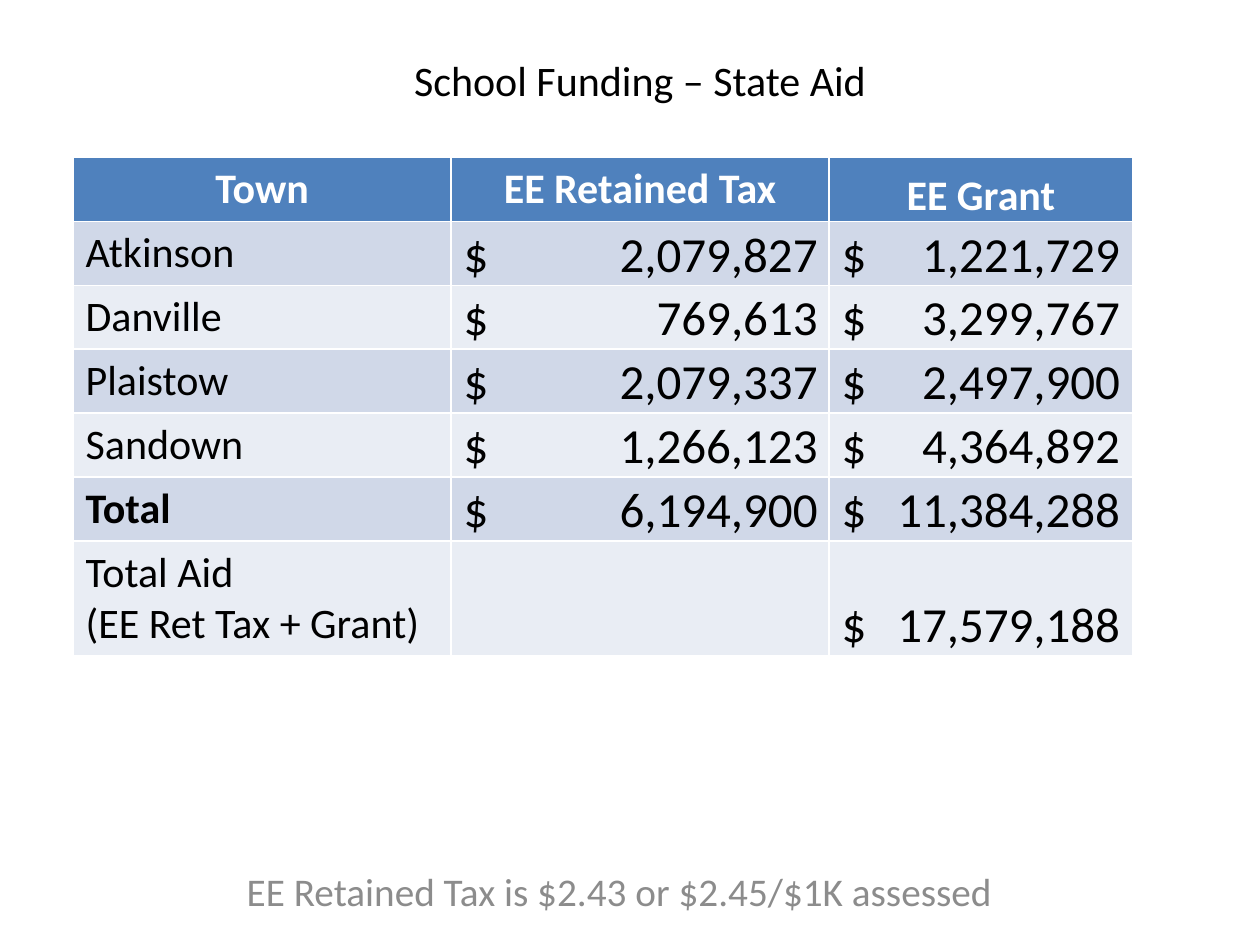
from dataclasses import dataclass

from lxml import etree
from pptx import Presentation
from pptx.dml.color import RGBColor
from pptx.enum.text import MSO_ANCHOR, MSO_AUTO_SIZE, PP_ALIGN
from pptx.oxml.ns import qn
from pptx.util import Inches, Pt

CENTER, LEFT = PP_ALIGN.CENTER, PP_ALIGN.LEFT
TOP, MIDDLE, BOTTOM = MSO_ANCHOR.TOP, MSO_ANCHOR.MIDDLE, MSO_ANCHOR.BOTTOM
NO_AUTOFIT = MSO_AUTO_SIZE.NONE


@dataclass(frozen=True)
class Theme:
    """Colours, font and type sizes of the slide."""
    font: str = "Calibri"
    text: str = "000000"
    light: str = "FFFFFF"
    muted: str = "8C8C8C"
    header: str = "4F81BD"
    bands: tuple = ("D0D8E8", "E9EDF4")
    body_size: float = 24
    amount_size: float = 28
    note_size: float = 22.4


THEME = Theme()
COLUMN_WIDTHS = (3, 3, 2.41)
AMOUNT_TABS = (2.81, 2.21)
ROW_HEIGHT, LAST_ROW_HEIGHT = 0.5, 0.9
HEADINGS = ("Town", "EE Retained Tax", "EE Grant")
AID_ROWS = (
    ("Atkinson", "2,079,827", "1,221,729"),
    ("Danville", "769,613", "3,299,767"),
    ("Plaistow", "2,079,337", "2,497,900"),
    ("Sandown", "1,266,123", "4,364,892"),
    ("Total", "6,194,900", "11,384,288"),
    ("Total Aid\n(EE Ret Tax + Grant)", "", "17,579,188"),
)


def write_lines(frame, text, size, color, bold=False, align=LEFT, tab=None):
    """Write each line of text as a paragraph, with an optional right tab."""
    for index, line in enumerate(text.split("\n")):
        para = frame.paragraphs[0] if index == 0 else frame.add_paragraph()
        para.alignment = align
        para.space_before = Pt(0)
        if tab is not None:
            stops = etree.SubElement(para._p.get_or_add_pPr(), qn("a:tabLst"))
            etree.SubElement(stops, qn("a:tab"), pos=str(Inches(tab)), algn="r")
        span = para.add_run()
        span.text = line
        span.font.name = THEME.font
        span.font.size = Pt(size)
        span.font.bold = bold
        span.font.color.rgb = RGBColor.from_string(color)


def fill_placeholder(box, place, text, size, color, anchor):
    """Move a placeholder and write its centred text."""
    box.left, box.top, box.width, box.height = map(Inches, place)
    frame = box.text_frame
    frame.word_wrap = True
    frame.auto_size = NO_AUTOFIT
    frame.vertical_anchor = anchor
    write_lines(frame, text, size, color, align=CENTER)


def paint_cell(cell, color):
    """Give a cell a solid fill."""
    cell.fill.solid()
    cell.fill.fore_color.rgb = RGBColor.from_string(color)


def anchor_low(cell, left=0.01):
    """Set a cell's text at its bottom edge with narrow margins."""
    cell.vertical_anchor = BOTTOM
    cell.margin_left = Inches(left)
    cell.margin_top = cell.margin_right = Inches(0.01)
    cell.margin_bottom = 0


def add_aid_table(page):
    """Add the table of state aid by town."""
    heights = [ROW_HEIGHT] * len(AID_ROWS) + [LAST_ROW_HEIGHT]
    frame = page.shapes.add_table(
        len(heights), len(HEADINGS), Inches(0.58), Inches(1.25),
        Inches(sum(COLUMN_WIDTHS)), Inches(sum(heights)))
    table = frame.table
    for column, width in zip(table.columns, COLUMN_WIDTHS):
        column.width = Inches(width)
    for row, height in zip(table.rows, heights):
        row.height = Inches(height)

    for index, heading in enumerate(HEADINGS):
        cell = table.cell(0, index)
        paint_cell(cell, THEME.header)
        write_lines(cell.text_frame, heading, THEME.body_size, THEME.light, True, CENTER)
    anchor_low(table.cell(0, len(HEADINGS) - 1))

    for number, (town, *amounts) in enumerate(AID_ROWS, start=1):
        band = THEME.bands[(number - 1) % 2]
        cell = table.cell(number, 0)
        paint_cell(cell, band)
        write_lines(cell.text_frame, town, THEME.body_size, THEME.text, town == "Total")
        for index, (amount, tab) in enumerate(zip(amounts, AMOUNT_TABS), start=1):
            cell = table.cell(number, index)
            paint_cell(cell, band)
            if amount:
                anchor_low(cell, left=0.1)
                write_lines(cell.text_frame, f"$\t{amount}", THEME.amount_size,
                            THEME.text, tab=tab)


def main():
    """Build the state aid slide."""
    deck = Presentation()
    deck.slide_width, deck.slide_height = Inches(10), Inches(7.5)
    page = deck.slides.add_slide(deck.slide_layouts[0])
    fill_placeholder(page.shapes.title, (0.83, 0.25, 8.5, 0.77),
                     "School Funding – State Aid", THEME.body_size, THEME.text, MIDDLE)
    add_aid_table(page)
    fill_placeholder(page.placeholders[1], (1.42, 6.83, 7, 0.42),
                     "EE Retained Tax is $2.43 or $2.45/$1K assessed",
                     THEME.note_size, THEME.muted, TOP)
    deck.save("out.pptx")


if __name__ == "__main__":
    main()
